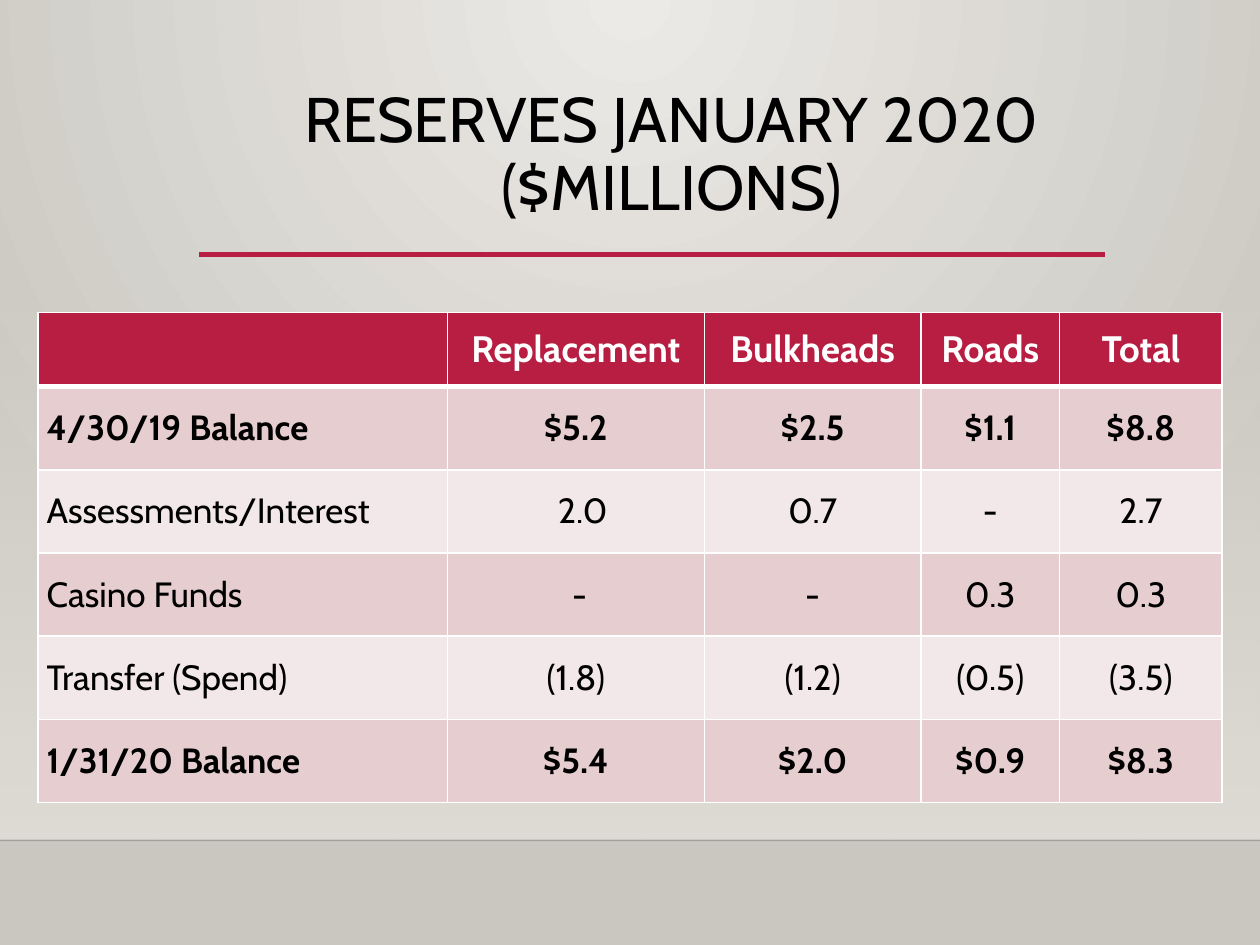
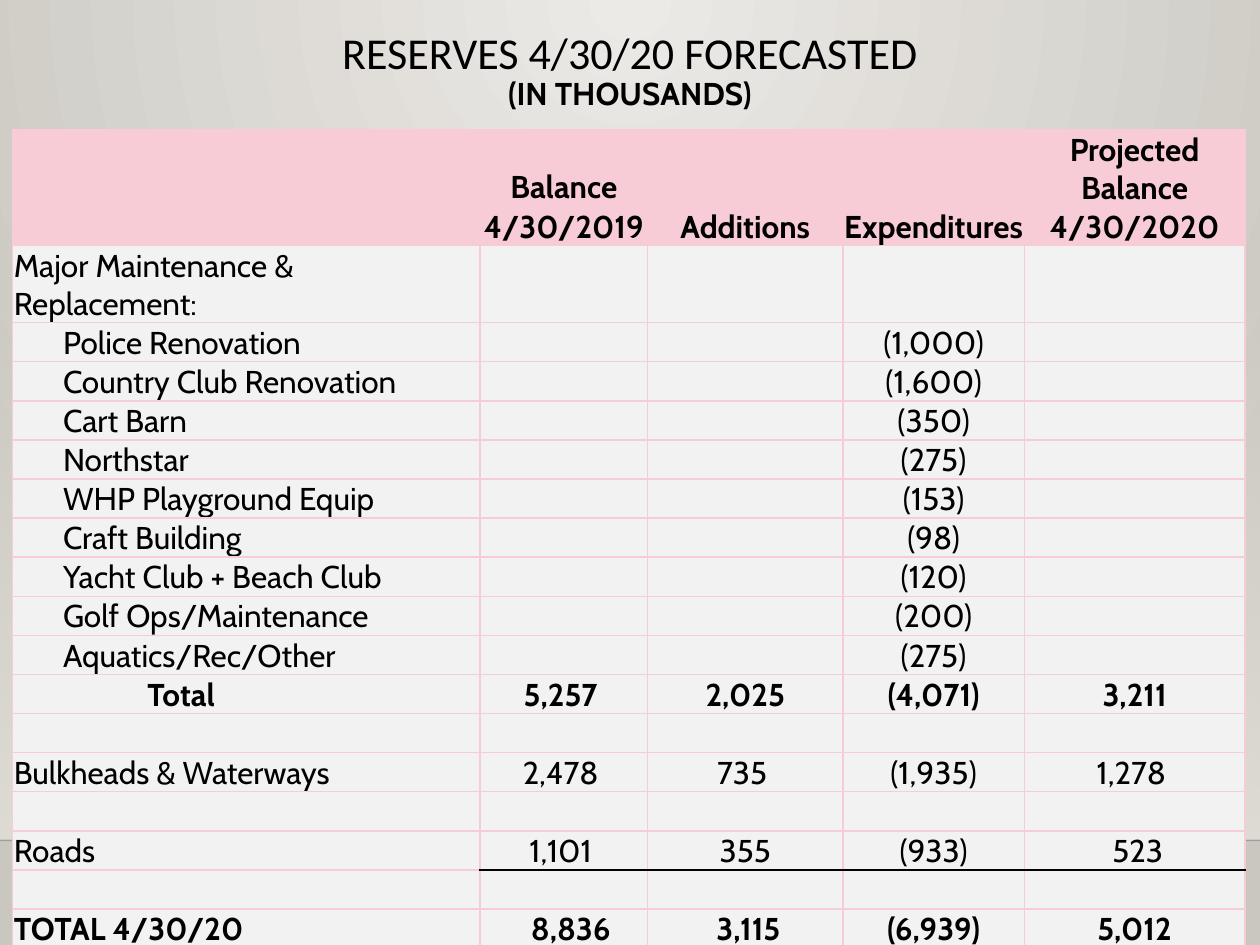
from pptx import Presentation
from pptx.dml.color import RGBColor
from pptx.enum import shapes, text
from pptx.oxml import parse_xml
from pptx.oxml.ns import nsdecls, qn
from pptx.oxml.xmlchemy import OxmlElement
from pptx.util import Inches, Pt

BLACK = RGBColor(0, 0, 0)
WHITE = RGBColor(0xFF, 0xFF, 0xFF)
CRIMSON = RGBColor(0xB7, 0x1E, 0x42)
ROSE = RGBColor(0xE6, 0xCD, 0xCF)
PALE_ROSE = RGBColor(0xF3, 0xE8, 0xE9)
PINK = RGBColor(0xF7, 0xCC, 0xD6)
LIGHT_GREY = RGBColor(0xF2, 0xF2, 0xF2)
BACK_LIGHT = RGBColor(0xEC, 0xEA, 0xE7)
BACK_DARK = RGBColor(0xCA, 0xC7, 0xC1)
WALL = RGBColor(0xDF, 0xDB, 0xD5)
HORIZON = RGBColor(0, 0, 1)

FONT = "Cabin"
TITLE_FONT = "Calibri"
CENTER, LEFT = text.PP_ALIGN.CENTER, text.PP_ALIGN.LEFT
TOP, MIDDLE, BOTTOM = (text.MSO_ANCHOR.TOP, text.MSO_ANCHOR.MIDDLE,
                       text.MSO_ANCHOR.BOTTOM)

RESERVES = [
    ["", "Replacement", "Bulkheads", "Roads", "Total"],
    ["4/30/19 Balance", "$5.2", "$2.5", "$1.1", "$8.8"],
    ["Assessments/Interest", "2.0", "0.7", "-", "2.7"],
    ["Casino Funds", "-", "-", "0.3", "0.3"],
    ["Transfer (Spend)", "(1.8)", "(1.2)", "(0.5)", "(3.5)"],
    ["1/31/20 Balance", "$5.4", "$2.0", "$0.9", "$8.3"],
]
PROJECTS = [
    ("Police Renovation", "(1,000)"),
    ("Country Club Renovation", "(1,600)"),
    ("Cart Barn", "(350)"),
    ("Northstar", "(275)"),
    ("WHP Playground Equip", "(153)"),
    ("Craft Building", "(98)"),
    ("Yacht Club + Beach Club", "(120)"),
    ("Golf Ops/Maintenance", "(200)"),
    ("Aquatics/Rec/Other", "(275)"),
]
EMPTY_ROW = [""] * 5
FORECAST = [
    ["", "Balance", "", "", "Projected Balance"],
    ["", "4/30/2019", "Additions", "Expenditures", "4/30/2020"],
    ["Major Maintenance & Replacement:", "", "", "", ""],
    *[[name, "", "", spend, ""] for name, spend in PROJECTS],
    ["Total", "5,257", "2,025", "(4,071)", "3,211"],
    EMPTY_ROW,
    ["Bulkheads & Waterways", "2,478", "735", "(1,935)", "1,278"],
    EMPTY_ROW,
    ["Roads", "1,101", "355", "(933)", "523"],
    EMPTY_ROW,
    ["TOTAL 4/30/20", "8,836", "3,115", "(6,939)", "5,012"],
]


def gradient(start, end, direction, start_alpha=100):
    return (f'<a:gradFill {nsdecls("a")} rotWithShape="1"><a:gsLst>'
            f'<a:gs pos="0"><a:srgbClr val="{start}">'
            f'<a:alpha val="{start_alpha * 1000}"/></a:srgbClr></a:gs>'
            f'<a:gs pos="100000"><a:srgbClr val="{end}"/></a:gs>'
            f'</a:gsLst>{direction}</a:gradFill>')


def add_rule(s, left, right, y, color, width):
    line = s.shapes.add_connector(shapes.MSO_CONNECTOR.STRAIGHT, Inches(left),
                                  Inches(y), Inches(right), Inches(y))
    line.line.color.rgb = color
    line.line.width = Pt(width)
    line._element.spPr.append(OxmlElement("a:effectLst"))
    return line


def add_backdrop(s):
    """Lit background, wall fading in towards the floor, and the floor edge."""
    glow = gradient(BACK_LIGHT, BACK_DARK,
                    '<a:path path="circle"><a:fillToRect l="43000" t="0" '
                    'r="43000" b="100000"/></a:path>')
    s.element.cSld.insert(0, parse_xml(
        f'<p:bg {nsdecls("p", "a")}><p:bgPr>{glow}<a:effectLst/></p:bgPr></p:bg>'))

    wall = s.shapes.add_shape(shapes.MSO_SHAPE.RECTANGLE, 0, Inches(2.2),
                              Inches(10), Inches(4.46))
    wall.shadow.inherit = False
    wall.line.fill.background()
    wall.fill.background()
    spPr = wall._element.spPr
    spPr.replace(spPr.find(qn("a:noFill")), parse_xml(
        gradient(WALL, WALL, '<a:lin ang="5400000" scaled="0"/>', 0)))

    edge = add_rule(s, 0, 10, 6.67, HORIZON, 1)
    alpha = OxmlElement("a:alpha")
    alpha.set("val", "20000")
    next(edge._element.iter(qn("a:srgbClr"))).append(alpha)


def add_title(s, box, lines, anchor):
    """Each line is (text, size, font, bold)."""
    tf = s.shapes.add_textbox(*map(Inches, box)).text_frame
    tf.word_wrap = True
    tf.vertical_anchor = anchor
    p = tf.paragraphs[0]
    p.alignment = CENTER
    p.line_spacing = 0.9
    for i, (words, size, font, bold) in enumerate(lines):
        if i:
            p.add_line_break()
        r = p.add_run()
        r.text = words
        r.font.size, r.font.name, r.font.bold = Pt(size), font, bold
        r.font.color.rgb = BLACK


def set_borders(cell, borders):
    """Borders maps L, R, T and B to (colour, width)."""
    tcPr = cell._tc.get_or_add_tcPr()
    for side in "LRTB":
        color, width = borders[side]
        tcPr.append(parse_xml(
            f'<a:ln{side} {nsdecls("a")} w="{Pt(width)}"><a:solidFill>'
            f'<a:srgbClr val="{color}"/></a:solidFill></a:ln{side}>'))


def write_cell(cell, words, size, color, bold, align, shift=0):
    """Shift moves the text right, or left when negative, by an indent."""
    p = cell.text_frame.paragraphs[0]
    p.text = words
    p.alignment = align
    if shift:
        p._p.get_or_add_pPr().set("marL" if shift > 0 else "marR",
                                  str(Inches(abs(shift))))
    p.font.size = Pt(size)
    for r in p.runs:
        r.font.size, r.font.name, r.font.bold = Pt(size), FONT, bold
        r.font.color.rgb = color


def add_grid(s, origin, col_widths, row_heights, margins, border):
    """Table with an even border; returns its rows of cells."""
    frame = s.shapes.add_table(len(row_heights), len(col_widths),
                               *map(Inches, origin), Inches(sum(col_widths)),
                               Inches(sum(row_heights)))
    table = frame.table
    table.first_row = table.horz_banding = False
    for col, width in zip(table.columns, col_widths):
        col.width = Inches(width)
    for row, height in zip(table.rows, row_heights):
        row.height = Inches(height)
    rows = [list(row.cells) for row in table.rows]
    for cell in sum(rows, []):
        (cell.margin_left, cell.margin_top,
         cell.margin_right, cell.margin_bottom) = map(Inches, margins)
    return rows, [[dict.fromkeys("LRTB", border) for _ in row] for row in rows]


def underline_row(borders, row, border, first_col=0):
    for above, below in list(zip(borders[row], borders[row + 1]))[first_col:]:
        above["B"] = below["T"] = border


def add_reserves_table(s, origin):
    rows, borders = add_grid(s, origin, [3.25, 2.04, 1.72, 1.1, 1.29],
                             [0.59] + [0.66] * 5, (0.07, 0.05, 0.07, 0.05),
                             (WHITE, 1))
    underline_row(borders, 0, (WHITE, 3))
    shifts = {(2, 1): 0.11, (3, 1): 0.06}
    for i, row in enumerate(rows):
        head = i == 0
        for j, cell in enumerate(row):
            set_borders(cell, borders[i][j])
            cell.fill.solid()
            cell.fill.fore_color.rgb = (CRIMSON if head else
                                        ROSE if i % 2 else PALE_ROSE)
            cell.vertical_anchor = MIDDLE
            write_cell(cell, RESERVES[i][j], 21 if head else 20,
                       WHITE if head else BLACK, i in (0, 1, 5),
                       CENTER if j else LEFT, shifts.get((i, j), 0))


def add_forecast_table(s, origin):
    heights = [0.58 if i in (0, 2) else 0.29 for i in range(len(FORECAST))]
    rows, borders = add_grid(s, origin, [3.71, 1.33, 1.55, 1.44, 1.75],
                             heights, (0.01, 0.01, 0.01, 0), (PINK, 1))
    labels = [row[0] for row in FORECAST]
    total, bulkheads, roads = map(labels.index, (
        "Total", "Bulkheads & Waterways", "Roads"))
    last = len(FORECAST) - 1
    underline_row(borders, roads, (BLACK, 1), first_col=1)
    shifts = {(total, 0): 1.06, (total, 1): -0.05, (bulkheads, 1): -0.05,
              (bulkheads, 2): -0.05, (bulkheads, 4): -0.05, (roads, 1): -0.05,
              (roads, 4): 0.05, (last, 1): 0.11, (last, 2): 0.05}
    shifts.update({(3 + i, 0): 0.39 for i in range(len(PROJECTS))})
    for i, row in enumerate(rows):
        head = i < 2
        for j, cell in enumerate(row):
            set_borders(cell, borders[i][j])
            cell.fill.solid()
            cell.fill.fore_color.rgb = PINK if head else LIGHT_GREY
            cell.vertical_anchor = BOTTOM if head or j == 0 else MIDDLE
            write_cell(cell, FORECAST[i][j], 18, BLACK,
                       head or i in (total, last), CENTER if j else LEFT,
                       shifts.get((i, j), 0))


def add_slide(prs):
    s = prs.slides.add_slide(prs.slide_layouts[6])
    add_backdrop(s)
    return s


def reserves_slide(prs):
    s = add_slide(prs)
    add_rule(s, 1.58, 8.77, 2.02, CRIMSON, 2.5)
    add_title(s, (1.43, 0.65, 7.8, 0.64),
              [("RESERVES JANUARY 2020 ($MILLIONS)", 36, FONT, False)], TOP)
    add_reserves_table(s, (0.3, 2.48))


def forecast_slide(prs):
    s = add_slide(prs)
    add_title(s, (0.4, 0.25, 9.2, 0.64),
              [("RESERVES 4/30/20 FORECASTED", 25.2, TITLE_FONT, False),
               ("(IN THOUSANDS)", 18, FONT, True)], MIDDLE)
    add_forecast_table(s, (0.1, 1.03))


def main():
    prs = Presentation()
    prs.slide_width, prs.slide_height = Inches(10), Inches(7.5)
    reserves_slide(prs)
    forecast_slide(prs)
    prs.save("out.pptx")


if __name__ == "__main__":
    main()
